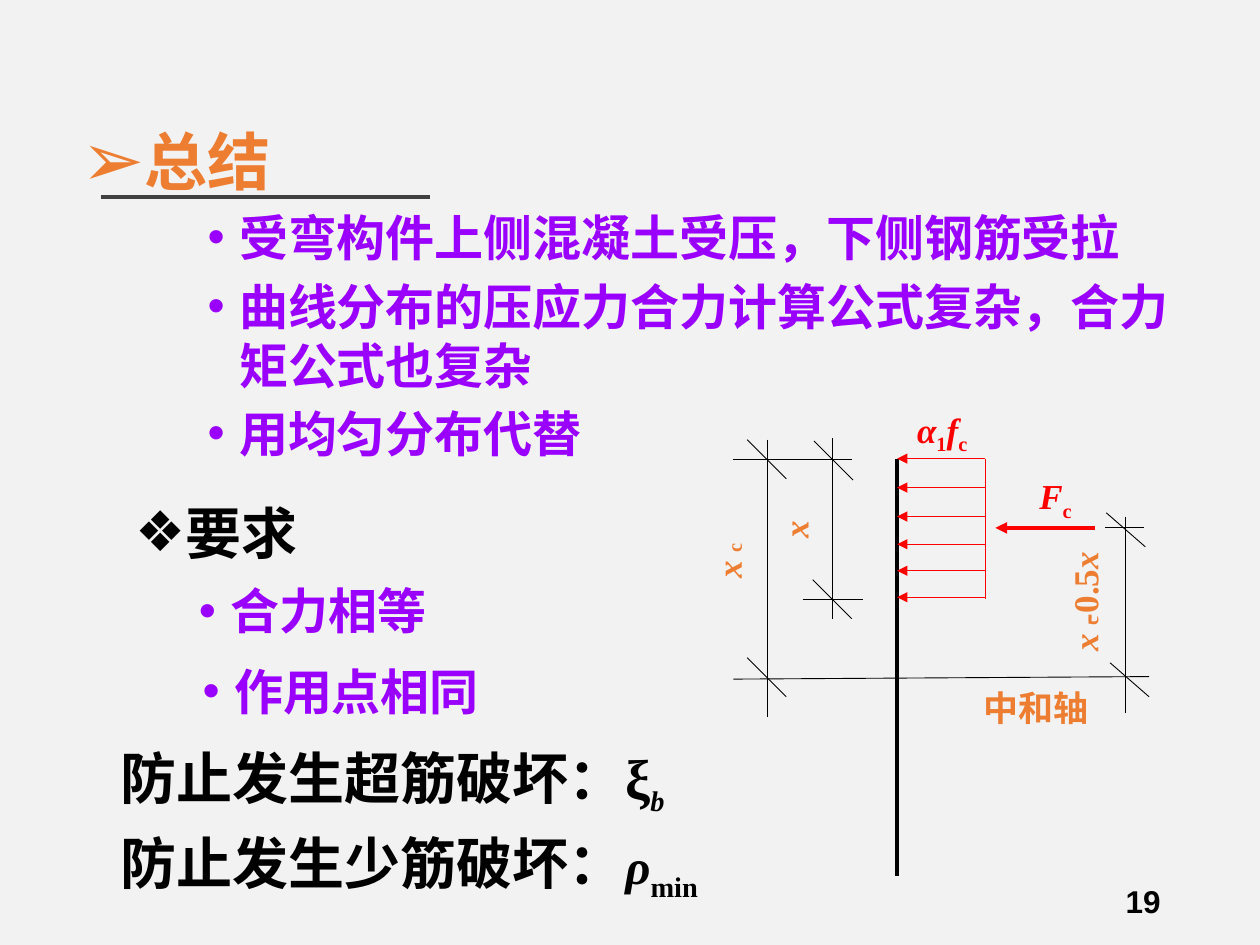
from lxml import etree
from pptx import Presentation
from pptx.dml.color import RGBColor
from pptx.enum.shapes import MSO_CONNECTOR as Connector
from pptx.enum.text import MSO_AUTO_SIZE as AutoSize, PP_ALIGN as Align
from pptx.oxml.ns import qn
from pptx.util import Inches, Pt

COLORS = {
    "background": "F2F2F2",
    "rule": "404040",
    "ink": "000000",
    "heading": "ED7D31",
    "point": "9900FF",
    "force": "FF0000",
}
SANS, SERIF, CJK = "Arial", "Times New Roman", "Noto Sans CJK SC"


def add_child(parent, tag, **attributes):
    return etree.SubElement(parent, qn(tag), attributes)


def add_line(shapes, start, end, color="ink", width=0.5, arrow=False):
    """Draw a straight line; an arrow points at its start."""
    ends = [Inches(value) for value in (*start, *end)]
    line = shapes.add_connector(Connector.STRAIGHT, *ends)
    line.line.color.rgb = RGBColor.from_string(COLORS[color])
    line.line.width = Pt(width)
    if arrow:
        add_child(line.line._get_or_add_ln(), "a:headEnd", type="triangle")
    add_child(line._element.spPr, "a:effectLst")


def add_run(paragraph, text, size, color, font=SANS, italic=False, sub=False):
    run = paragraph.add_run()
    run.text = text
    run.font.size = Pt(size)
    run.font.bold = True
    run.font.italic = italic
    run.font.color.rgb = RGBColor.from_string(COLORS[color])
    run.font.name = font
    properties = run.font._element
    add_child(properties, "a:ea", typeface=CJK)
    if sub:
        properties.set("baseline", "-25000")


def add_box(shapes, left, top, width, height, wrap=True):
    box = shapes.add_textbox(*[Inches(v) for v in (left, top, width, height)])
    box.text_frame.word_wrap = wrap
    box.text_frame.auto_size = AutoSize.NONE
    return box


def set_bullet(paragraph, bullet, margin, hanging, percent=100):
    properties = paragraph._p.get_or_add_pPr()
    properties.set("marL", str(Inches(margin)))
    properties.set("indent", str(-Inches(hanging)))
    before = add_child(properties, "a:spcBef")
    add_child(before, "a:spcPct", val="20000")
    add_child(properties, "a:buSzPct", val=str(percent * 1000))
    add_child(properties, "a:buFont", typeface=SANS)
    add_child(properties, "a:buChar", char=bullet)


def add_point(paragraph, text, font=SANS):
    set_bullet(paragraph, "•", 1.25, 0.25)
    add_run(paragraph, text, 28, "point", font)


def add_symbols(shapes, frame, color, symbols, upward=False):
    """Label made of (text, italic, subscript) parts, reading upward if asked."""
    label = add_box(shapes, *frame, wrap=not upward)
    if upward:
        label.rotation = 180
        label.text_frame._txBody.bodyPr.set("vert", "eaVert")
    for text, italic, sub in symbols:
        add_run(label.text_frame.paragraphs[0], text, 20, color, SERIF, italic, sub)


def add_summary(shapes):
    frame = add_box(shapes, 0.55, 0.92, 8.9, 2.9).text_frame
    heading = frame.paragraphs[0]
    set_bullet(heading, "➢", 0.38, 0.38, 120)
    add_run(heading, "总结", 36, "heading")
    for text in (
        "受弯构件上侧混凝土受压，下侧钢筋受拉",
        "曲线分布的压应力合力计算公式复杂，合力矩公式也复杂",
        "用均匀分布代替",
    ):
        add_point(frame.add_paragraph(), text)


def add_stress_diagram(shapes):
    section, block_edge, block_top = 7.12, 7.82, 3.64
    add_line(shapes, (section, block_top), (section, 6.95), width=2.25)
    for y in (block_top, 3.87, 4.1, 4.32, 4.53, 4.74):
        add_line(shapes, (section, y), (block_edge, y), "force", arrow=True)
    add_line(shapes, (block_edge, block_top), (block_edge, 4.75), "force")
    add_line(shapes, (7.9, 4.19), (8.69, 4.19), "force", 2.25, arrow=True)

    dimension_lines = [
        ((6.09, 3.49), (6.09, 5.69)),
        ((6.61, 3.48), (6.61, 4.91)),
        ((8.93, 4.1), (8.93, 5.66)),
    ]
    reference_lines = [
        ((5.82, 5.39), (9.12, 5.37)),
        ((5.82, 3.65), (6.76, 3.65)),
        ((6.37, 4.76), (6.85, 4.76)),
        ((8.77, 4.19), (9.08, 4.19)),
    ]
    for start, end in dimension_lines + reference_lines:
        add_line(shapes, start, end)
    for x, y, drop in (
        (5.93, 3.49, 0.31), (5.93, 5.22, 0.31), (6.46, 3.5, 0.31),
        (6.45, 4.6, 0.31), (8.81, 5.26, 0.27), (8.78, 4.07, 0.27),
    ):
        add_line(shapes, (x, y), (x + 0.31, y + drop))

    axis = add_box(shapes, 7.71, 5.4, 1.21, 0.46).text_frame.paragraphs[0]
    add_run(axis, "中和轴", 20, "heading", CJK)
    x, c = ("x", True, False), ("c", False, True)
    add_symbols(shapes, (7.18, 3.19, 0.72, 0.43), "force",
                [("α", True, False), ("1", False, True), ("f", True, False), c])
    add_symbols(shapes, (8.15, 3.72, 0.54, 0.43), "force", [("F", True, False), c])
    for frame, symbols in (
        ((5.56, 4.37, 0.53, 0.32), [x, c]),
        ((6.09, 4.13, 0.53, 0.24), [x]),
        ((8.39, 4.37, 0.53, 0.9), [x, c, ("-0.5", False, False), x]),
    ):
        add_symbols(shapes, frame, "heading", symbols, upward=True)


def add_requirements(shapes):
    heading = add_box(shapes, 0.48, 3.91, 3.03, 0.7).text_frame.paragraphs[0]
    set_bullet(heading, "❖", 0.81, 0.31)
    add_run(heading, "要求", 32, "ink")
    for left, top, text in ((0.48, 4.56, "合力相等"), (0.51, 5.2, "作用点相同")):
        point = add_box(shapes, left, top, 8.34, 0.67).text_frame.paragraphs[0]
        add_point(point, text, SERIF)


def add_limit(shapes, top, width, condition, symbol, symbol_format, index, index_italic):
    limit = add_box(shapes, 0.86, top, width, 0.63).text_frame.paragraphs[0]
    add_run(limit, condition, 32, "ink")
    size, italic = symbol_format
    add_run(limit, symbol, size, "ink", SERIF, italic)
    add_run(limit, index, 28, "ink", SERIF, index_italic, sub=True)


def main():
    deck = Presentation()
    deck.slide_width, deck.slide_height = Inches(10), Inches(7.5)
    slide = deck.slides.add_slide(deck.slide_layouts[6])
    slide.background.fill.solid()
    slide.background.fill.fore_color.rgb = RGBColor.from_string(COLORS["background"])
    shapes = slide.shapes

    add_line(shapes, (0.8, 1.56), (3.41, 1.56), "rule", 2.25)
    page = add_box(shapes, 7.06, 6.95, 2.25, 0.4).text_frame.paragraphs[0]
    page.alignment = Align.RIGHT
    add_run(page, "19", 18, "ink")
    add_summary(shapes)
    add_stress_diagram(shapes.add_group_shape().shapes)
    add_requirements(shapes)
    add_limit(shapes, 5.85, 4.96, "防止发生超筋破坏：", "ξ", (32, False), "b", True)
    add_limit(shapes, 6.53, 5.47, "防止发生少筋破坏：", "ρ", (28, True), "min", False)
    deck.save("out.pptx")


if __name__ == "__main__":
    main()
